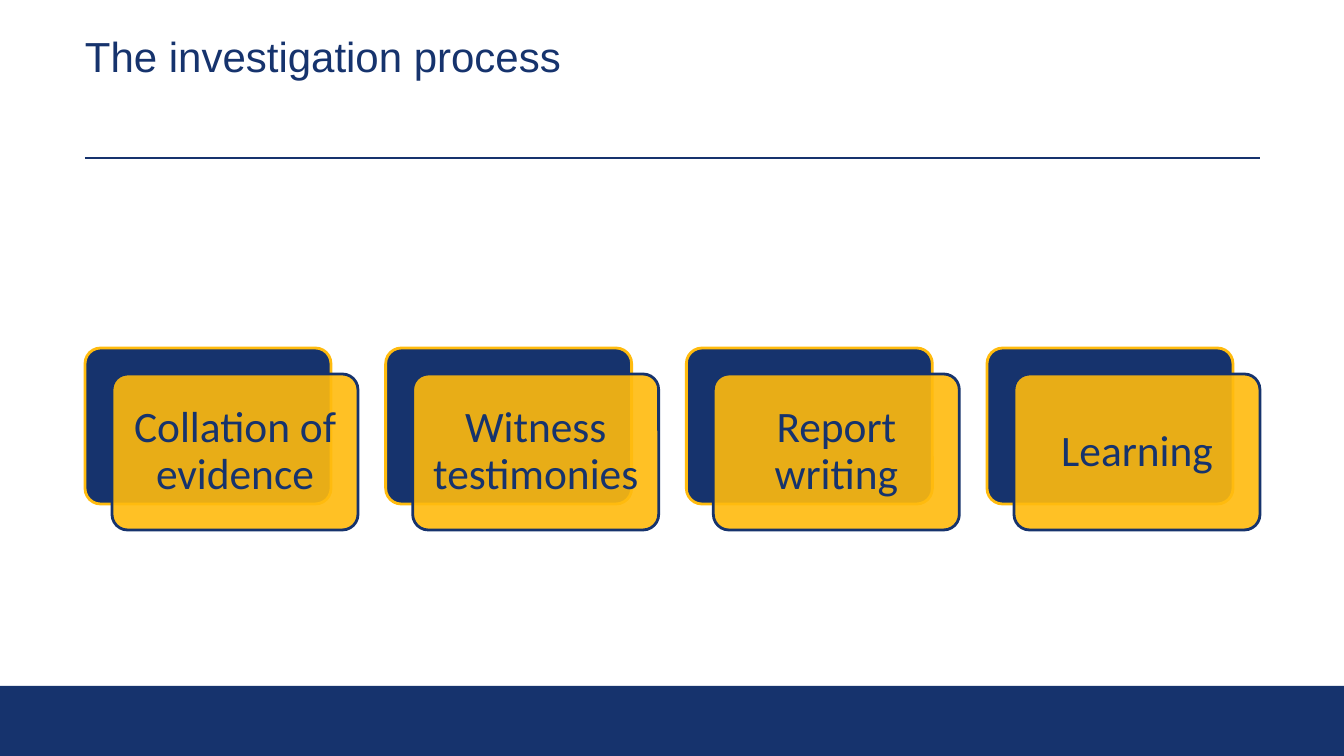
from lxml.etree import SubElement
from pptx import Presentation
from pptx.dml.color import RGBColor
from pptx.enum.shapes import MSO_CONNECTOR as CONNECTOR, MSO_SHAPE as SHAPE
from pptx.enum.text import MSO_ANCHOR as ANCHOR, PP_ALIGN as ALIGN
from pptx.oxml.ns import qn
from pptx.util import Inches, Pt

TITLE = "The investigation process"
STEPS = ["Collation of evidence", "Witness testimonies", "Report writing", "Learning"]

NAVY = RGBColor(0x16, 0x33, 0x6D)
AMBER = RGBColor(0xFF, 0xBB, 0x0E)

SLIDE_W, SLIDE_H = 1344, 756
LEFT, RIGHT = 85, 1260
FOOTER_TOP = 686
RULE_Y = 158
CARD_TOP, CARD_W, CARD_H = 348, 246, 156
SHIFT_X, SHIFT_Y = 27, 26
PITCH = (RIGHT - LEFT - CARD_W - SHIFT_X) / (len(STEPS) - 1)
CARD_INSET = 13


def px(length):
    return round(length * Inches(1) / 100.8)


def set_insets(frame, inset):
    frame.margin_left = frame.margin_right = px(inset)
    frame.margin_top = frame.margin_bottom = px(inset)
    frame.word_wrap = True


def write(frame, text, font_name, size):
    line = frame.paragraphs[0]
    line.text = text
    line.font.name = font_name
    line.font.size = Pt(size)
    line.font.color.rgb = NAVY
    return line


def add_block(kind, x, y, w, h, fill):
    block = slide.shapes.add_shape(kind, px(x), px(y), px(w), px(h))
    block.shadow.inherit = False
    block.fill.solid()
    block.fill.fore_color.rgb = fill
    block.line.fill.background()
    return block


def add_card(x, y, fill, border):
    card = add_block(SHAPE.ROUNDED_RECTANGLE, x, y, CARD_W, CARD_H, fill)
    card.adjustments[0] = 0.1
    card.line.color.rgb = border
    card.line.width = Pt(2)
    return card


def add_step(x, step):
    add_card(x, CARD_TOP, NAVY, AMBER)
    front = add_card(x + SHIFT_X, CARD_TOP + SHIFT_Y, AMBER, NAVY)
    tint = front._element.spPr.find(qn("a:solidFill"))[0]
    SubElement(tint, qn("a:alpha"), val="90000")
    set_insets(front.text_frame, CARD_INSET)
    front.text_frame.vertical_anchor = ANCHOR.MIDDLE
    label = write(front.text_frame, step, "Calibri", 31)
    label.alignment = ALIGN.CENTER
    label.line_spacing = 0.9


deck = Presentation()
deck.slide_width, deck.slide_height = px(SLIDE_W), px(SLIDE_H)
slide = deck.slides.add_slide(deck.slide_layouts[6])

add_block(SHAPE.RECTANGLE, 0, FOOTER_TOP, SLIDE_W, SLIDE_H - FOOTER_TOP, NAVY)

rule = slide.shapes.add_connector(
    CONNECTOR.STRAIGHT, px(LEFT), px(RULE_Y), px(RIGHT), px(RULE_Y))
rule.line.color.rgb = NAVY
rule.line.width = Pt(1)
SubElement(rule._element.spPr, qn("a:effectLst"))

for index, step in enumerate(STEPS):
    add_step(LEFT + index * PITCH, step)

heading = slide.shapes.add_textbox(px(LEFT), px(31), px(RIGHT - LEFT), px(111))
set_insets(heading.text_frame, 0)
write(heading.text_frame, TITLE, "Arial", 30)

deck.save("out.pptx")
